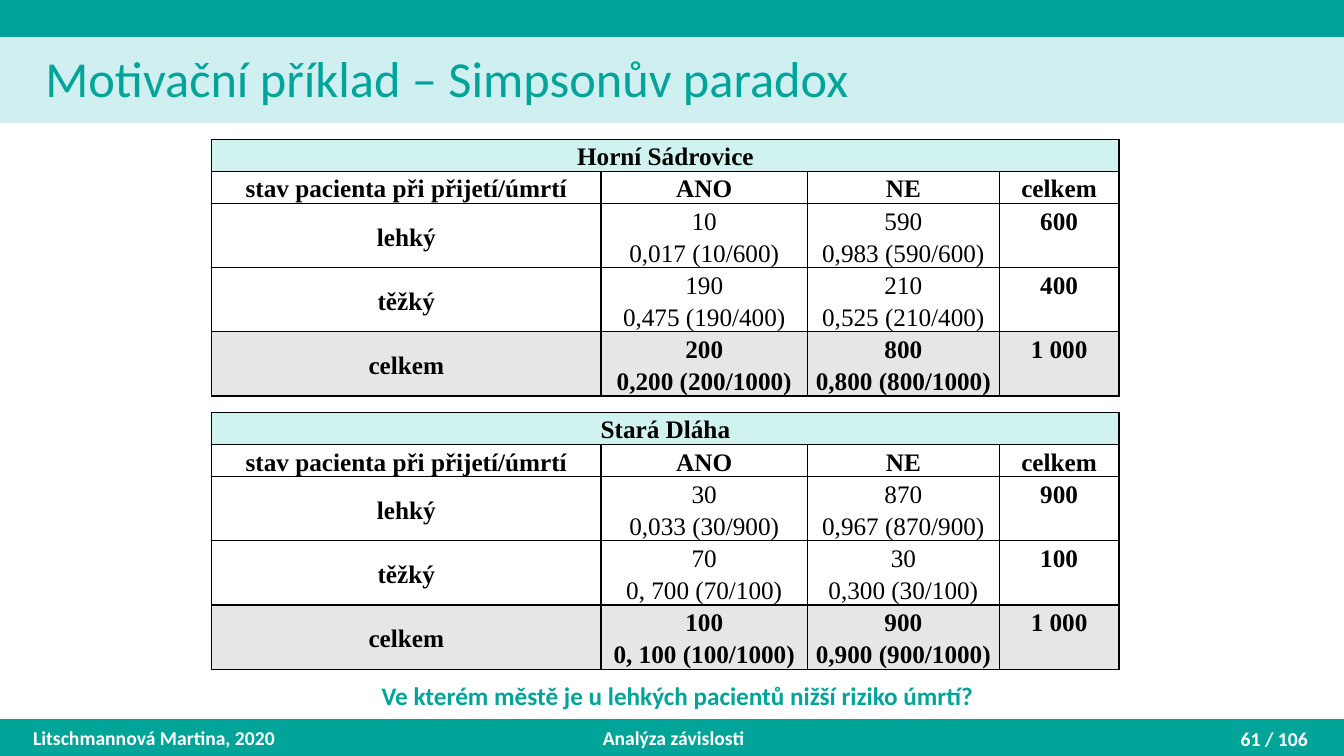
from dataclasses import dataclass

from lxml import etree
from pptx import Presentation
from pptx.dml.color import RGBColor
from pptx.enum.shapes import MSO_SHAPE
from pptx.enum.text import MSO_ANCHOR, MSO_AUTO_SIZE, PP_ALIGN
from pptx.oxml.ns import qn
from pptx.util import Inches, Pt

LEFT, CENTER, RIGHT = PP_ALIGN.LEFT, PP_ALIGN.CENTER, PP_ALIGN.RIGHT
TOP, MIDDLE = MSO_ANCHOR.TOP, MSO_ANCHOR.MIDDLE

TITLE = "Motivační příklad – Simpsonův paradox"
QUESTION = "Ve kterém městě je u lehkých pacientů nižší riziko úmrtí?"
HEADINGS = ["stav pacienta při přijetí/úmrtí", "ANO", "NE", "celkem"]

# Each state of patients: label, (count, share) for ANO and NE, total
TOWNS = [
    ("Horní Sádrovice", [
        ("lehký", ("10", "0,017 (10/600)"), ("590", "0,983 (590/600)"), "600"),
        ("těžký", ("190", "0,475 (190/400)"), ("210", "0,525 (210/400)"), "400"),
        ("celkem", ("200", "0,200 (200/1000)"), ("800", "0,800 (800/1000)"), "1 000"),
    ]),
    ("Stará Dláha", [
        ("lehký", ("30", "0,033 (30/900)"), ("870", "0,967 (870/900)"), "900"),
        ("těžký", ("70", "0, 700 (70/100)"), ("30", "0,300 (30/100)"), "100"),
        ("celkem", ("100", "0, 100 (100/1000)"), ("900", "0,900 (900/1000)"), "1 000"),
    ]),
]
# Text, left, top, width, alignment
FOOTERS = [
    ("Litschmannová Martina, 2020", 0.23, 7.14, 3, LEFT),
    ("Analýza závislosti", 4.43, 7.14, 4.5, CENTER),
    ("61 / 106", 10.07, 7.15, 3, RIGHT),
]


@dataclass(frozen=True)
class Theme:
    teal: str = "00A499"
    pale: str = "D0EFF0"
    table_title: str = "D1F3EF"
    total: str = "E7E6E6"
    ink: str = "000000"
    white: str = "FFFFFF"
    sans: str = "Calibri"
    serif: str = "Times New Roman"
    title_size: int = 36
    text_size: int = 18
    footer_size: int = 14


THEME = Theme()
WIDTH, HEIGHT = 13.33, 7.5
BAND = 0.36
TABLE_LEFT, TABLE_TOP, TABLE_PITCH = 2.1, 1.38, 2.71
TABLE_WIDTH, TABLE_HEIGHT = 9, 2.54
COLUMNS = [3.86, 2.05, 1.9, 1.19]
ROW_COUNT = 8
LAST_COLUMN = len(COLUMNS) - 1


def write(frame, text, size, color, font, bold=False, align=LEFT, spacing=None):
    paragraph = frame.paragraphs[0]
    paragraph.alignment = align
    if spacing:
        paragraph.line_spacing = spacing
    run = paragraph.add_run()
    run.text = text
    run.font.size = Pt(size)
    run.font.name = font
    run.font.bold = bold
    run.font.color.rgb = RGBColor.from_string(color)


def add_band(slide, left, top, height, color, line_width):
    band = slide.shapes.add_shape(MSO_SHAPE.RECTANGLE, Inches(left), Inches(top),
                                  Inches(WIDTH), Inches(height))
    band.shadow.inherit = False
    band.fill.solid()
    band.fill.fore_color.rgb = band.line.color.rgb = RGBColor.from_string(color)
    band.line.width = Pt(line_width)


def add_label(slide, left, top, width, height, anchor, *text_style, **options):
    box = slide.shapes.add_textbox(Inches(left), Inches(top), Inches(width), Inches(height))
    box.text_frame.word_wrap = True
    box.text_frame.vertical_anchor = anchor
    write(box.text_frame, *text_style, **options)


def set_borders(cell, open_sides):
    """Draw a thin line on each side of the cell except the open ones."""
    properties = cell._tc.get_or_add_tcPr()
    for position, side in enumerate("LRTB"):
        line = etree.Element(qn(f"a:ln{side}"), w=str(Pt(1)))
        if side in open_sides:
            etree.SubElement(line, qn("a:noFill"))
        else:
            fill = etree.SubElement(line, qn("a:solidFill"))
            etree.SubElement(fill, qn("a:srgbClr"), val=THEME.ink)
        properties.insert(position, line)


def find_open_sides(cell, row, column):
    if cell.is_merge_origin or row == 1:
        return ""
    if row == 0:
        return "L" if column == LAST_COLUMN else "LR"
    return "B" if row % 2 == 0 else "T"


def table_rows(town, states):
    rows = [[town, "", "", ""], HEADINGS]
    for label, yes, no, total in states:
        rows += [[label, yes[0], no[0], total], ["", yes[1], no[1], ""]]
    return rows


def add_town_table(slide, top, town, states):
    table = slide.shapes.add_table(ROW_COUNT, len(COLUMNS), Inches(TABLE_LEFT), Inches(top),
                                   Inches(TABLE_WIDTH), Inches(TABLE_HEIGHT)).table
    table.first_row = table.horz_banding = False
    for column, width in zip(table.columns, COLUMNS):
        column.width = Inches(width)
    table.cell(0, 0).merge(table.cell(0, LAST_COLUMN))
    for row in range(2, ROW_COUNT, 2):
        table.cell(row, 0).merge(table.cell(row + 1, 0))

    fills = {0: THEME.table_title, ROW_COUNT - 2: THEME.total, ROW_COUNT - 1: THEME.total}
    for row, texts in enumerate(table_rows(town, states)):
        for column, text in enumerate(texts):
            cell = table.cell(row, column)
            cell.margin_left = cell.margin_right = Inches(0.05)
            cell.margin_top = cell.margin_bottom = 0
            cell.vertical_anchor = MIDDLE
            if row in fills:
                cell.fill.solid()
                cell.fill.fore_color.rgb = RGBColor.from_string(fills[row])
            else:
                cell.fill.background()
            set_borders(cell, find_open_sides(cell, row, column))
            if text:
                is_count = 2 <= row < ROW_COUNT - 2 and 0 < column < LAST_COLUMN
                write(cell.text_frame, text, THEME.text_size, THEME.ink, THEME.serif,
                      bold=not is_count, align=CENTER, spacing=1.15)


def add_title(slide):
    title = slide.shapes.title
    title.left, title.top = Inches(0.35), Inches(0.4)
    title.width, title.height = Inches(11.88), Inches(0.81)
    frame = title.text_frame
    frame.auto_size = MSO_AUTO_SIZE.NONE
    frame.word_wrap = True
    frame.vertical_anchor = MIDDLE
    write(frame, TITLE, THEME.title_size, THEME.teal, THEME.sans, spacing=0.9)
    title._element.getparent().append(title._element)  # bring in front of the bands


def main():
    presentation = Presentation()
    presentation.slide_width, presentation.slide_height = Inches(WIDTH), Inches(HEIGHT)
    slide = presentation.slides.add_slide(presentation.slide_layouts[5])

    add_band(slide, 0, HEIGHT - BAND, BAND, THEME.teal, 1)
    add_band(slide, 0.01, BAND, 0.86, THEME.pale, 0.75)
    add_band(slide, 0, 0, BAND, THEME.teal, 1)
    for text, left, top, width, align in FOOTERS:
        add_label(slide, left, top, width, BAND, MIDDLE, text, THEME.footer_size,
                  THEME.white, THEME.sans, bold=True, align=align)
    add_title(slide)
    for index, (town, states) in enumerate(TOWNS):
        add_town_table(slide, TABLE_TOP + index * TABLE_PITCH, town, states)
    add_label(slide, 2.23, 6.7, 8.98, 0.4, TOP, QUESTION, THEME.text_size,
              THEME.teal, THEME.sans, bold=True, align=CENTER)
    presentation.save("out.pptx")


if __name__ == "__main__":
    main()
